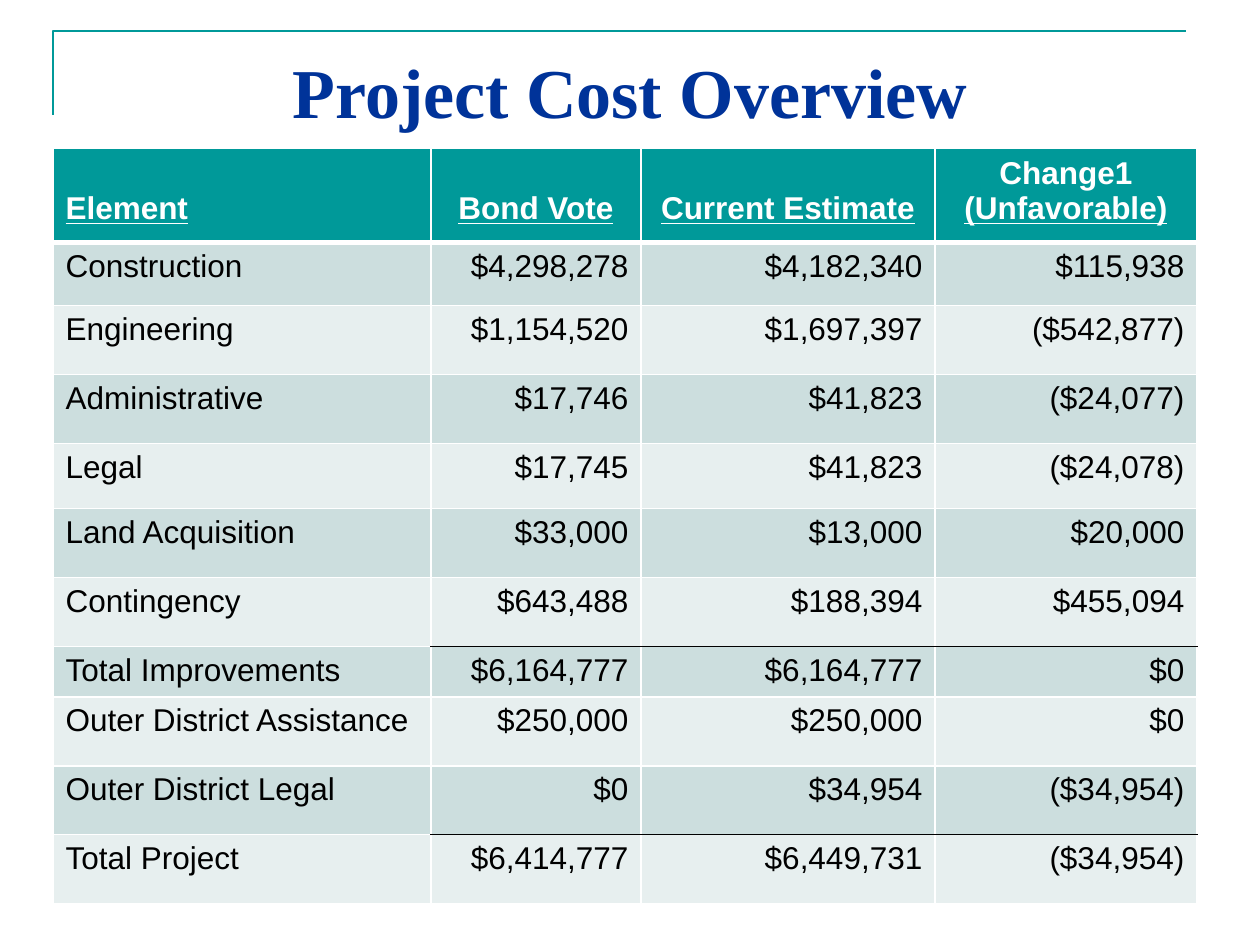
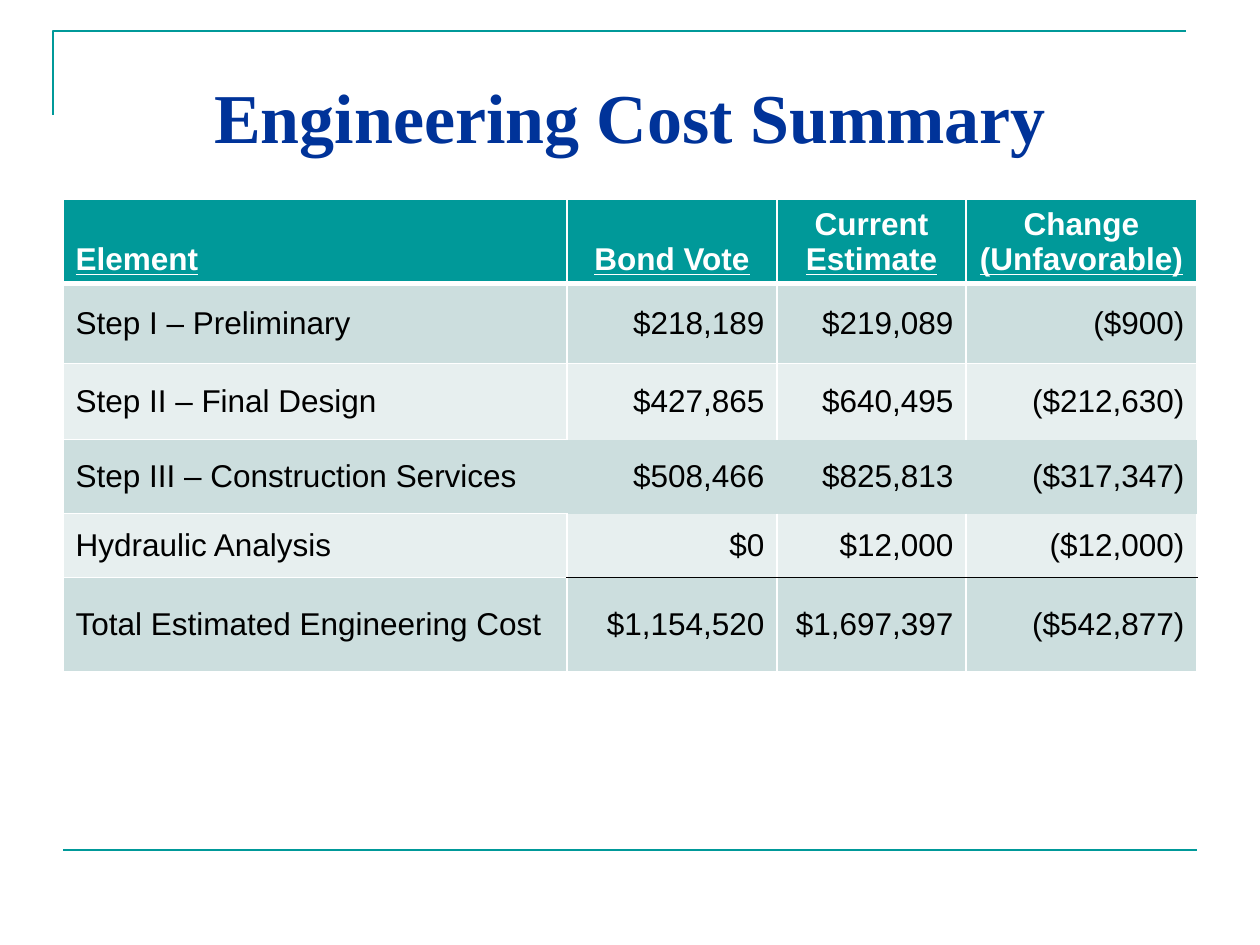
from lxml import etree
from pptx import Presentation
from pptx import util as u
from pptx.dml.color import RGBColor
from pptx.enum import shapes, text
from pptx.oxml.ns import qn

COLORS = {
    "teal": "009999",
    "navy": "003399",
    "white": "FFFFFF",
    "black": "000000",
    "band_dark": "CCDEDE",
    "band_light": "E7EFEF",
}
EMU_PER_PX = 914400 / 126
TITLE_FONT, BODY_FONT = "Times New Roman", "Arial"
HEADER_TEXT_HEIGHT = 77

OVERVIEW_ROWS = [
    ("Element", "Bond Vote", "Current Estimate", "Change1\n(Unfavorable)"),
    ("Construction", "$4,298,278", "$4,182,340", "$115,938"),
    ("Engineering", "$1,154,520", "$1,697,397", "($542,877)"),
    ("Administrative", "$17,746", "$41,823", "($24,077)"),
    ("Legal", "$17,745", "$41,823", "($24,078)"),
    ("Land Acquisition", "$33,000", "$13,000", "$20,000"),
    ("Contingency", "$643,488", "$188,394", "$455,094"),
    ("Total Improvements", "$6,164,777", "$6,164,777", "$0"),
    ("Outer District Assistance", "$250,000", "$250,000", "$0"),
    ("Outer District Legal", "$0", "$34,954", "($34,954)"),
    ("Total Project", "$6,414,777", "$6,449,731", "($34,954)"),
]
ENGINEERING_ROWS = [
    ("Element", "Bond Vote", "Current |Estimate", "Change\n(Unfavorable)"),
    ("Step I – Preliminary", "$218,189", "$219,089", "($900)"),
    ("Step II – Final Design", "$427,865", "$640,495", "($212,630)"),
    ("Step III – Construction Services", "$508,466", "$825,813", "($317,347)"),
    ("Hydraulic Analysis", "$0", "$12,000", "($12,000)"),
    ("Total Estimated Engineering Cost", "$1,154,520", "$1,697,397", "($542,877)"),
]


def px(n):
    return u.Emu(round(n * EMU_PER_PX))


def rgb(name):
    return RGBColor.from_string(COLORS[name])


class Deck:
    """Holds the shared style and the slide being built."""

    def __init__(self):
        self.prs = Presentation()
        self.prs.slide_width, self.prs.slide_height = px(1260), px(945)
        self.s = None

    def slide(self, title, title_y):
        self.s = self.prs.slides.add_slide(self.prs.slide_layouts[6])
        self.corner()
        self.title(title, title_y)

    def stroke(self, line):
        line.color.rgb = rgb("teal")
        line.width = u.Pt(1.5)

    def corner(self):
        fb = self.s.shapes.build_freeform(53, 115, scale=EMU_PER_PX)
        fb.add_line_segments([(53, 31), (1186, 31)], close=False)
        sp = fb.convert_to_shape()
        sp.shadow.inherit = False
        sp.fill.background()
        self.stroke(sp.line)

    def rule(self, x1, x2, y):
        cn = self.s.shapes.add_connector(
            shapes.MSO_CONNECTOR.STRAIGHT, px(x1), px(y), px(x2), px(y))
        self.stroke(cn.line)
        etree.SubElement(cn._element.spPr, qn("a:effectLst"))

    def font(self, r, name, size, color, bold):
        r.font.name, r.font.size, r.font.bold = name, u.Pt(size), bold
        r.font.color.rgb = rgb(color)

    def title(self, title, y):
        tf = self.s.shapes.add_textbox(px(63), px(y), px(1134), px(105)).text_frame
        tf.word_wrap = True
        tf.vertical_anchor = text.MSO_ANCHOR.MIDDLE
        tf.text = title
        p = tf.paragraphs[0]
        p.alignment = text.PP_ALIGN.CENTER
        self.font(p.runs[0], TITLE_FONT, 40, "navy", True)

    def border(self, cell, side, edge):
        """Draw one side (L, R, T or B); edge is (colour, points) or None."""
        ln = etree.SubElement(cell._tc.get_or_add_tcPr(), qn("a:ln" + side))
        if edge is None:
            ln.set("w", "0")
            etree.SubElement(ln, qn("a:noFill"))
            return
        color, width = edge
        ln.set("w", str(u.Pt(width)))
        fill = etree.SubElement(ln, qn("a:solidFill"))
        etree.SubElement(fill, qn("a:srgbClr"), val=COLORS[color])

    def cell_text(self, cell, value, header, first_col):
        """Fill a cell; "|" starts a new run, and a header underlines its last run."""
        tf = cell.text_frame
        first, *rest = value.split("|")
        tf.text = first
        for part in rest:
            tf.paragraphs[-1].add_run().text = part
        if first_col:
            align = text.PP_ALIGN.LEFT
        else:
            align = text.PP_ALIGN.CENTER if header else text.PP_ALIGN.RIGHT
        for p in tf.paragraphs:
            p.alignment = align
            for r in p.runs:
                self.font(r, BODY_FONT, 18, "white" if header else "black", header)
        if header:
            tf.paragraphs[-1].runs[-1].font.underline = True

    def table(self, x, y, widths, heights, rows, anchor, totals, bare_row=None):
        """Totals get a black rule above them; bare_row has no borders past column 0."""
        tb = self.s.shapes.add_table(len(rows), len(widths), px(x), px(y),
                                     px(sum(widths)), px(sum(heights))).table
        tb.horz_banding = False
        for col, width in zip(tb.columns, widths):
            col.width = px(width)
        for row, height in zip(tb.rows, heights):
            row.height = px(height)

        def h_edge(i, c):
            if i == 1:
                return "white", 3
            if c and bare_row is not None and i in (bare_row, bare_row + 1):
                return None
            return ("black" if c and i in totals else "white"), 1

        def v_edge(i, r):
            return None if i and r == bare_row else ("white", 1)

        for r, values in enumerate(rows):
            for c, value in enumerate(values):
                cell, header = tb.cell(r, c), r == 0
                self.cell_text(cell, value, header, c == 0)
                cell.vertical_anchor = text.MSO_ANCHOR.BOTTOM if header else anchor
                if header:
                    cell.margin_top = px(3)
                    cell.margin_bottom = px(heights[0] - HEADER_TEXT_HEIGHT)
                edges = {"L": v_edge(c, r), "R": v_edge(c + 1, r),
                         "T": h_edge(r, c), "B": h_edge(r + 1, c)}
                for side, edge in edges.items():
                    self.border(cell, side, edge)
                cell.fill.solid()
                band = "band_dark" if r % 2 else "band_light"
                cell.fill.fore_color.rgb = rgb("teal" if header else band)


def main():
    d = Deck()

    d.slide("Project Cost Overview", 38)
    d.table(53, 148, [378, 210, 294, 262],
            [93, 63, 69, 69, 65, 69, 69, 48, 69, 69, 69],
            OVERVIEW_ROWS, text.MSO_ANCHOR.TOP, totals=(7, 10))

    d.slide("Engineering Cost Summary", 63)
    d.rule(63, 1197, 850)
    d.table(63, 199, [504, 210, 189, 231], [83, 80, 76, 74, 64, 94],
            ENGINEERING_ROWS, text.MSO_ANCHOR.MIDDLE, totals=(5,), bare_row=3)

    d.prs.save("out.pptx")


if __name__ == "__main__":
    main()
